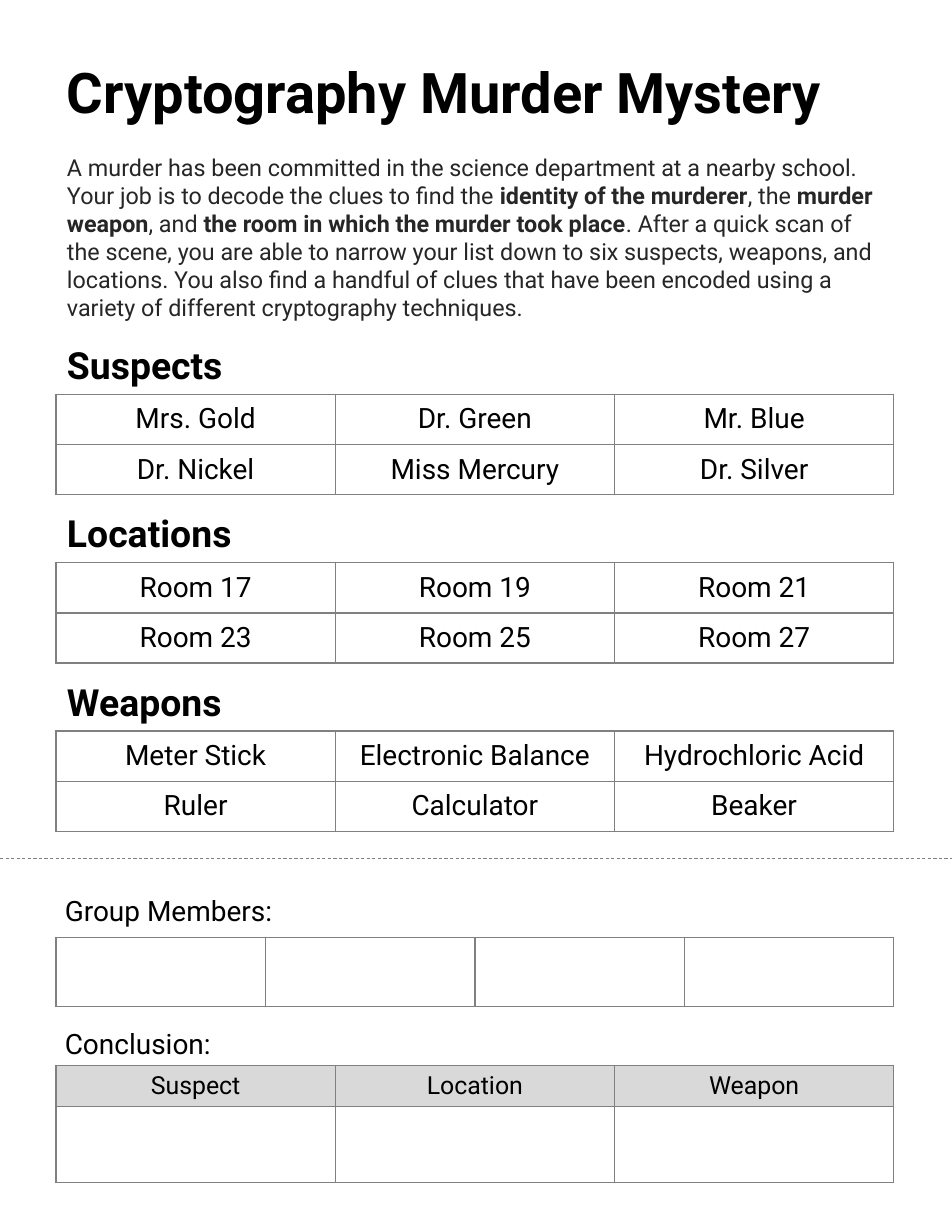
from dataclasses import dataclass
from lxml import etree
from pptx import Presentation, util as u
from pptx.dml.color import RGBColor
from pptx.enum import dml, shapes, text
from pptx.oxml import ns


@dataclass(frozen=True)
class Theme:
    face: str = "Roboto"
    ink: str = "000000"
    soft: str = "262626"
    rule: str = "808080"
    head: str = "D9D9D9"
    paper: str = "FFFFFF"
    title: int = 36
    group: int = 24
    entry: int = 18
    label: int = 16
    body: int = 15


def put(item, **vals):
    for key, val in vals.items():
        setattr(item, key, val)


class Sheet:
    def __init__(self, slide, theme):
        self.slide = slide
        self.theme = theme

    def words(self, para, label, size, color, bold=False):
        run = para.add_run()
        run.text = label
        put(run.font, name=self.theme.face, size=u.Pt(size), bold=bold)
        run.font.color.rgb = RGBColor.from_string(color)

    def frame(self, left, top, high, anchor):
        box = self.slide.shapes.add_textbox(
            u.Cm(left), u.Cm(top), u.Cm(19.05), u.Cm(high))
        put(box.text_frame, word_wrap=True, vertical_anchor=anchor)
        return box.text_frame.paragraphs[0]

    def line(self, label, left, top, high, size, bold=False):
        para = self.frame(left, top, high, text.MSO_ANCHOR.BOTTOM)
        para.line_spacing = 0.9
        self.words(para, label, size, self.theme.ink, bold)

    def prose(self, parts, left, top, high):
        para = self.frame(left, top, high, text.MSO_ANCHOR.TOP)
        para.space_before = u.Pt(8.5)
        for spot, part in enumerate(parts):
            self.words(para, part, self.theme.body, self.theme.soft, spot % 2 == 1)

    def edge(self, cell):
        props = cell._tc.get_or_add_tcPr()
        for spot, side in enumerate(("lnL", "lnR", "lnT", "lnB")):
            line = etree.Element(ns.qn("a:" + side), w=str(u.Pt(1)))
            fill = etree.SubElement(line, ns.qn("a:solidFill"))
            etree.SubElement(fill, ns.qn("a:srgbClr"), val=self.theme.rule)
            props.insert(spot, line)

    def table(self, rows, top, highs, size, fill):
        wide = 19
        grid = self.slide.shapes.add_table(
            len(rows), len(rows[0]), u.Cm(1.27), u.Cm(top),
            u.Cm(wide), u.Cm(sum(highs))).table
        put(grid, first_row=False, horz_banding=False)
        for col in grid.columns:
            col.width = u.Cm(wide / len(rows[0]))
        for r, (names, high) in enumerate(zip(rows, highs)):
            grid.rows[r].height = u.Cm(high)
            for c, name in enumerate(names):
                cell = grid.cell(r, c)
                cell.vertical_anchor = text.MSO_ANCHOR.MIDDLE
                if name:
                    cell.fill.solid()
                    cell.fill.fore_color.rgb = RGBColor.from_string(fill)
                    para = cell.text_frame.paragraphs[0]
                    para.alignment = text.PP_ALIGN.CENTER
                    self.words(para, name, size, self.theme.ink)
                else:
                    cell.fill.background()
                self.edge(cell)

    def cut(self, top, wide):
        rule = self.slide.shapes.add_connector(
            shapes.MSO_CONNECTOR.STRAIGHT, 0, u.Cm(top), wide, u.Cm(top))
        put(rule.line, width=u.Pt(0.5), dash_style=dml.MSO_LINE.DASH)
        rule.line.color.rgb = RGBColor.from_string(self.theme.rule)
        etree.SubElement(rule._element.spPr, ns.qn("a:effectLst"))


INTRO = (
    "A murder has been committed in the science department at a nearby school. "
    "Your job is to decode the clues to find the ",
    "identity of the murderer",
    ", the ",
    "murder weapon",
    ", and ",
    "the room in which the murder took place",
    ". After a quick scan of the scene, you are able to narrow your list down to "
    "six suspects, weapons, and locations. You also find a handful of clues that "
    "have been encoded using a variety of different cryptography techniques.",
)
GROUPS = {
    "Suspects": (("Mrs. Gold", "Dr. Green", "Mr. Blue"),
                 ("Dr. Nickel", "Miss Mercury", "Dr. Silver")),
    "Locations": (("Room 17", "Room 19", "Room 21"),
                  ("Room 23", "Room 25", "Room 27")),
    "Weapons": (("Meter Stick", "Electronic Balance", "Hydrochloric Acid"),
                ("Ruler", "Calculator", "Beaker")),
}


def main():
    deck = Presentation()
    put(deck, slide_width=u.Cm(21.59), slide_height=u.Cm(27.94))
    theme = Theme()
    sheet = Sheet(deck.slides.add_slide(deck.slide_layouts[6]), theme)

    sheet.line("Cryptography Murder Mystery", 1.27, 1.35, 1.63, theme.title, True)
    sheet.prose(INTRO, 1.27, 3.35, 4.88)
    for spot, (name, rows) in enumerate(GROUPS.items()):
        top = 8.94 + 3.82 * spot
        sheet.line(name, 1.27, top - 1.25, 1.22, theme.group, True)
        sheet.table(rows, top, (1.14, 1.14), theme.entry, theme.paper)

    sheet.cut(19.46, deck.slide_width)
    sheet.line("Group Members:", 1.22, 19.94, 1.22, theme.entry)
    sheet.table([[""] * 4], 21.26, [1.57], theme.entry, theme.paper)
    sheet.line("Conclusion:", 1.22, 23.14, 1.04, theme.entry)
    sheet.table([("Suspect", "Location", "Weapon"), [""] * 3],
                24.16, (0.92, 1.73), theme.label, theme.head)
    deck.save("out.pptx")


if __name__ == "__main__":
    main()
